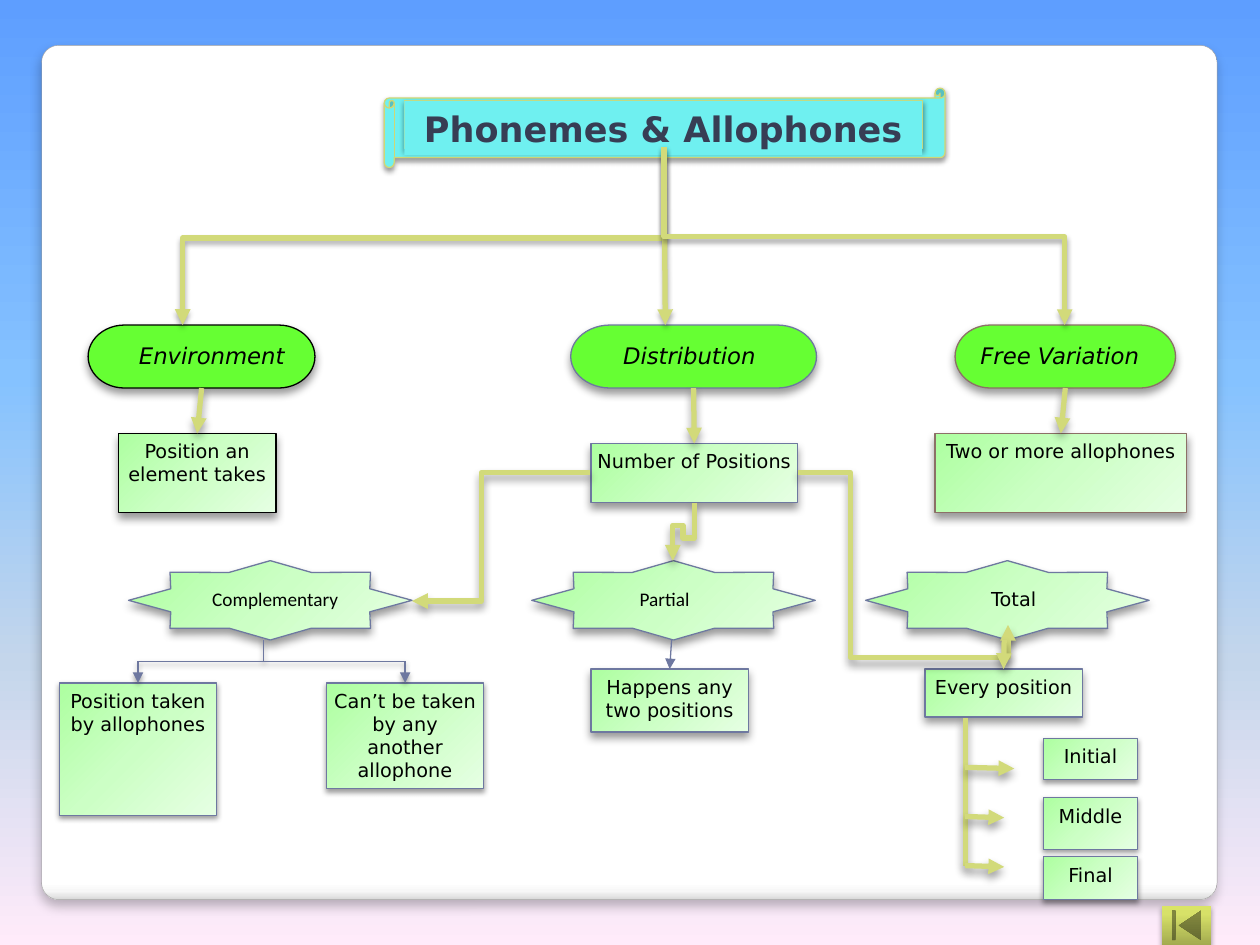
import lxml.etree
import pptx
import pptx.dml.color
import pptx.enum.shapes
import pptx.enum.text
import pptx.oxml.ns
import pptx.util

Inches = pptx.util.Inches
Pt = pptx.util.Pt
Shapes = pptx.enum.shapes.MSO_SHAPE
qn = pptx.oxml.ns.qn

SLATE, OLIVE, BROWN, BLACK = "6E78A0", "D2DA7A", "8C7067", "000000"
AQUA, LIME, WHITE = "6FF0F0", "66FF33", "FFFFFF"
SKY = [(0, "5E9EFF"), (40, "85C2FF"), (70, "C4D6EB"), (100, "FFEBFA")]
PAPER = [(0, WHITE), (98, WHITE), (99, "F7F7F7"), (100, "D9D9D9")]
MINT = [(0, "ADFFA0"), (50, "CCFFC5"), (100, "E6FFE3")]
MOSS = [(0, "A3AB4F"), (80, "D7E168"), (100, "DAE466")]
DEEP, SOFT, FINE = (40, 5, 3), (38, 3, 1.6), (35, 3, 1.8)


def color(value):
    return pptx.dml.color.RGBColor.from_string(value)


def add_xml(parent, tag, **attributes):
    return lxml.etree.SubElement(parent, qn(tag), attributes)


class Diagram:
    """Holds the style and the current slide, and draws each kind of element."""

    def __init__(self, slide, font="DejaVu Sans"):
        self.slide = slide
        self.font = font

    def gradient(self, fill, element, stops, angle):
        fill.gradient()
        gradient = next(element.iter(qn("a:gradFill")))
        for child in list(gradient):
            gradient.remove(child)
        stop_list = add_xml(gradient, "a:gsLst")
        for position, value in stops:
            stop = add_xml(stop_list, "a:gs", pos=str(position * 1000))
            add_xml(stop, "a:srgbClr", val=value)
        add_xml(gradient, "a:lin", ang=str(angle * 60000), scaled="0")

    def background(self, stops, angle):
        self.gradient(self.slide.background.fill, self.slide.element, stops, angle)

    def shadow(self, shape, shadow):
        properties = shape.element.spPr
        effects = properties.find(qn("a:effectLst"))
        if effects is None:
            effects = add_xml(properties, "a:effectLst")
        if shadow:
            opacity, blur, distance = shadow
            outer = add_xml(effects, "a:outerShdw", blurRad=str(Pt(blur)),
                            dist=str(Pt(distance)), dir="5400000", rotWithShape="0")
            tint = add_xml(outer, "a:srgbClr", val=BLACK)
            add_xml(tint, "a:alpha", val=str(opacity * 1000))

    def shape(self, kind, bounds, fill, line=None, shadow=DEEP, width=0.75, angle=45):
        shape = self.slide.shapes.add_shape(kind, *map(Inches, bounds))
        shape.shadow.inherit = False
        if isinstance(fill, str):
            shape.fill.solid()
            shape.fill.fore_color.rgb = color(fill)
        else:
            self.gradient(shape.fill, shape.element, fill, angle)
        if line:
            shape.line.color.rgb = color(line)
            shape.line.width = Pt(width)
        else:
            shape.line.fill.background()
        self.shadow(shape, shadow)
        return shape

    def set_text(self, shape, text, size, font=None, value=BLACK, bold=False, italic=False):
        frame = shape.text_frame
        frame.text = text
        frame.word_wrap = True
        frame.auto_size = pptx.enum.text.MSO_AUTO_SIZE.NONE
        frame.vertical_anchor = pptx.enum.text.MSO_ANCHOR.TOP
        frame.margin_left = frame.margin_right = Inches(0.05)
        frame.margin_top = frame.margin_bottom = Inches(0.05)
        paragraph = frame.paragraphs[0]
        paragraph.alignment = pptx.enum.text.PP_ALIGN.CENTER
        for run in paragraph.runs:
            run.font.name = font or self.font
            run.font.size = Pt(size)
            run.font.bold = bold
            run.font.italic = italic
            run.font.color.rgb = color(value)

    def title(self, text, bounds):
        title = self.slide.shapes.title
        title.left, title.top, title.width, title.height = map(Inches, bounds)
        title.fill.solid()
        title.fill.fore_color.rgb = color(AQUA)
        self.set_text(title, text, 20, value="373D54", bold=True)
        title.element.getparent().append(title.element)

    def label(self, text, bounds, size, font=None, italic=False):
        box = self.slide.shapes.add_textbox(*map(Inches, bounds))
        self.set_text(box, text, size, font, italic=italic)

    def box(self, text, bounds, line=SLATE, shadow=DEEP):
        box = self.shape(Shapes.RECTANGLE, bounds, MINT, line, shadow)
        self.set_text(box, text, 11)
        return box

    def stroke(self, shape, value, width, arrow, shadow):
        shape.line.color.rgb = color(value)
        shape.line.width = Pt(width)
        if arrow:
            outline = shape.element.spPr.find(qn("a:ln"))
            add_xml(outline, "a:tailEnd", type="triangle")
        self.shadow(shape, shadow)

    def line(self, start, end, value=OLIVE, width=3, arrow=True, shadow=DEEP,
             source=None, target=None):
        connector = self.slide.shapes.add_connector(
            pptx.enum.shapes.MSO_CONNECTOR.STRAIGHT, *map(Inches, start + end))
        if source:
            connector.begin_connect(source, 2)
        if target:
            connector.end_connect(target, 0)
        self.stroke(connector, value, width, arrow, shadow)

    def route(self, points, shadow=DEEP):
        corners = [(Inches(x), Inches(y)) for x, y in points]
        builder = self.slide.shapes.build_freeform(*corners[0])
        builder.add_line_segments(corners[1:], close=False)
        shape = builder.convert_to_shape()
        shape.fill.background()
        shape.shadow.inherit = False
        self.stroke(shape, OLIVE, 3, True, shadow)


def main():
    presentation = pptx.Presentation()
    presentation.slide_width = Inches(10)
    presentation.slide_height = Inches(7.5)
    slide = presentation.slides.add_slide(presentation.slide_layouts[5])
    diagram = Diagram(slide)
    diagram.background(SKY, 90)

    panel = diagram.shape(Shapes.ROUNDED_RECTANGLE, (0.33, 0.36, 9.33, 6.78), PAPER,
                          "A2A1A1", (25, 6, 4), 0.25, 90)
    panel.adjustments[0] = 0.02
    diagram.shape(Shapes.HORIZONTAL_SCROLL, (3.05, 0.7, 4.45, 0.63), AQUA, "CFD775", SOFT)
    diagram.shape(Shapes.RECTANGLE, (3.21, 0.8, 4.11, 0.38), AQUA, "CFD775", SOFT)
    diagram.title("Phonemes & Allophones", (3.21, 0.8, 4.11, 0.43))

    branches = [
        ("Environment", 0.7, 1.8, 0.78, 1.8, BLACK,
         "Position an element takes", (0.94, 3.44, 1.25, 0.63)),
        ("Distribution", 4.53, 1.95, 4.69, 1.56, SLATE,
         "Number of Positions", (4.69, 3.52, 1.64, 0.47)),
        ("Free Variation", 7.58, 1.75, 7.66, 1.5, BROWN,
         "Two or more allophones", (7.42, 3.44, 2, 0.63)),
    ]
    links = []
    for name, left, width, label_left, label_width, line, detail, bounds in branches:
        pill = diagram.shape(Shapes.FLOWCHART_TERMINATOR, (left, 2.58, width, 0.5), LIME, line)
        diagram.label(name, (label_left, 2.66, label_width, 0.32), 13, italic=True)
        links.append((pill, diagram.box(detail, bounds, line)))

    kinds = [
        ("Complementary", 1.02, 1.48, 1.41, "Calibri"),
        ("Partial", 4.22, 4.69, 1.17, "Calibri"),
        ("Total", 6.87, 7.5, 1.09, None),
    ]
    for name, left, label_left, label_width, font in kinds:
        star = diagram.shape(Shapes.STAR_8_POINT, (left, 4.45, 2.25, 0.63), MINT, SLATE)
        star.adjustments[0] = 0.38
        diagram.label(name, (label_left, 4.61, label_width, 0.28), 11, font)

    thin = {"value": SLATE, "width": 0.75, "shadow": SOFT}
    diagram.line((2.09, 5.08), (2.09, 5.25), arrow=False, **thin)
    diagram.line((1.09, 5.25), (3.22, 5.25), arrow=False, **thin)
    for text, left, height in [("Position taken by allophones", 0.47, 1.05),
                               ("Can’t be taken by any another allophone", 2.59, 0.84)]:
        box = diagram.box(text, (left, 5.42, 1.25, height), shadow=SOFT)
        middle = left + 1.25 / 2
        diagram.line((middle, 5.25), (middle, 5.42), target=box, **thin)

    partial = diagram.box("Happens any two positions", (4.69, 5.31, 1.25, 0.5))
    every = diagram.box("Every position", (7.34, 5.31, 1.25, 0.38))
    for index, (text, height) in enumerate([("Initial", 0.33), ("Middle", 0.41),
                                            ("Final", 0.34)]):
        diagram.box(text, (8.28, 5.86 + 0.47 * index, 0.75, height), shadow=SOFT)
    diagram.line((5.33, 5.08), (5.33, 5.31), SLATE, 0.75, shadow=None, target=partial)

    diagram.line((7.66, 5.7), (7.66, 6.87), arrow=False)
    for y, right in [(6.87, 7.97), (6.48, 7.97), (6.09, 8.05)]:
        diagram.line((7.66, y), (right, y + 0.01))

    diagram.route([(5.27, 1.25), (5.27, 1.89), (1.45, 1.89), (1.45, 2.58)], FINE)
    diagram.line((5.27, 1.17), (5.28, 2.58), shadow=FINE)
    diagram.route([(5.27, 1.17), (5.27, 1.88), (8.45, 1.88), (8.45, 2.58)], FINE)
    for pill, box in links:
        diagram.line((0, 0), (0, 0), source=pill, target=box)
    diagram.route([(4.68, 3.75), (3.82, 3.75), (3.82, 4.77), (3.27, 4.77)])
    diagram.route([(5.51, 3.99), (5.51, 4.27), (5.42, 4.27), (5.42, 4.17),
                   (5.34, 4.17), (5.34, 4.45)])
    diagram.route([(6.33, 3.75), (6.75, 3.75), (6.75, 5.22), (8, 5.22), (8, 4.96)])
    diagram.line((7.97, 5.08), (7.97, 5.31), target=every)

    diagram.shape(Shapes.ACTION_BUTTON_BEGINNING, (9.22, 7.19, 0.39, 0.31), MOSS,
                  shadow=FINE, angle=270)
    presentation.save("out.pptx")


if __name__ == "__main__":
    main()
